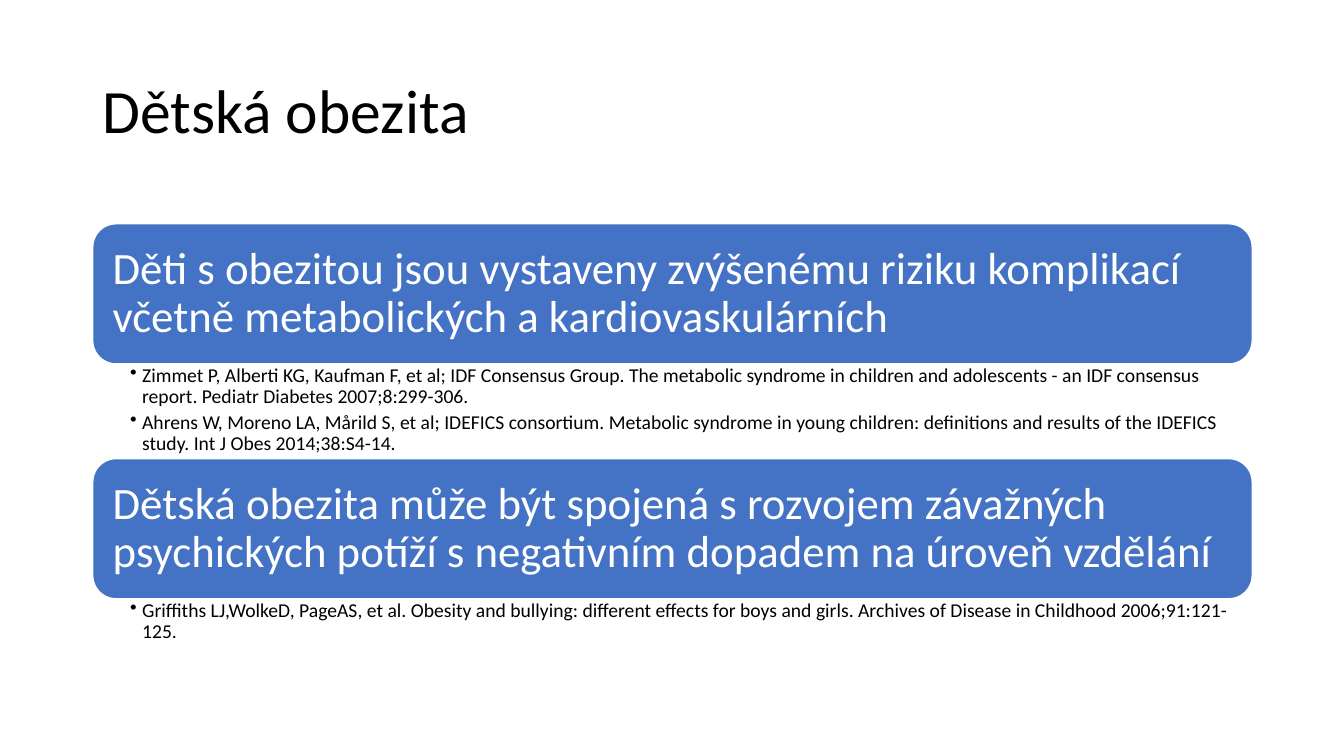
import pptx
import pptx.util
import pptx.dml.color
import pptx.enum.shapes
import pptx.enum.text
from lxml import etree
from pptx.util import Inches, Pt

TITLE = "Dětská obezita"
GROUPS = [
    ("Děti s obezitou jsou vystaveny zvýšenému riziku komplikací včetně "
     "metabolických a kardiovaskulárních",
     ["Zimmet P, Alberti KG, Kaufman F, et al; IDF Consensus Group. The metabolic "
      "syndrome in children and adolescents - an IDF consensus report. "
      "Pediatr Diabetes 2007;8:299-306.",
      "Ahrens W, Moreno LA, Mårild S, et al; IDEFICS consortium. Metabolic syndrome "
      "in young children: definitions and results of the IDEFICS study. "
      "Int J Obes 2014;38:S4-14."]),
    ("Dětská obezita může být spojená s rozvojem závažných psychických potíží "
     "s negativním dopadem na úroveň vzdělání",
     ["Griffiths LJ,WolkeD, PageAS, et al. Obesity and bullying: different effects "
      "for boys and girls. Archives of Disease in Childhood 2006;91:121-125."]),
]

BLACK = pptx.dml.color.RGBColor(0x00, 0x00, 0x00)
WHITE = pptx.dml.color.RGBColor(0xFF, 0xFF, 0xFF)
BLUE = pptx.dml.color.RGBColor(0x44, 0x72, 0xC4)
FONT = "Calibri"
LEFT, WIDTH = 0.92, 11.5
TOP, BAR = 2.22, 1.39
REFS = {1: 0.58, 2: 0.94}  # height of a list by its number of entries


def set_frame(shape, pads, middle=True):
    frame = shape.text_frame
    frame.word_wrap = True
    frame.auto_size = pptx.enum.text.MSO_AUTO_SIZE.NONE
    anchor = pptx.enum.text.MSO_ANCHOR
    frame.vertical_anchor = anchor.MIDDLE if middle else anchor.TOP
    (frame.margin_left, frame.margin_top,
     frame.margin_right, frame.margin_bottom) = map(Inches, pads)
    return frame


def write(para, text, size, color):
    para.alignment = pptx.enum.text.PP_ALIGN.LEFT
    para.line_spacing = 0.9
    run = para.add_run()
    run.text = text
    run.font.name, run.font.size = FONT, Pt(size)
    run.font.color.rgb = color


def add_bullet(para):
    props = para._p.get_or_add_pPr()
    props.set("marL", str(Inches(0.12)))
    props.set("indent", str(Inches(-0.12)))
    mark = etree.SubElement(props, pptx.oxml.ns.qn("a:buChar"))
    mark.set("char", "•")


def add_bar(slide, top, text):
    bar = slide.shapes.add_shape(
        pptx.enum.shapes.MSO_SHAPE.ROUNDED_RECTANGLE,
        Inches(LEFT), Inches(top), Inches(WIDTH), Inches(BAR))
    bar.shadow.inherit = False
    bar.fill.solid()
    bar.fill.fore_color.rgb = BLUE
    bar.line.color.rgb = WHITE
    bar.line.width = Pt(1)
    frame = set_frame(bar, (0.13,) * 4)
    write(frame.paragraphs[0], text, 32, WHITE)


def add_refs(slide, top, refs):
    box = slide.shapes.add_textbox(
        Inches(LEFT), Inches(top), Inches(WIDTH), Inches(REFS[len(refs)]))
    frame = set_frame(box, (0.37, 0.02, 0.11, 0.02), middle=False)
    for i, ref in enumerate(refs):
        para = frame.add_paragraph() if i else frame.paragraphs[0]
        add_bullet(para)
        para.space_after = Pt(2.8)
        write(para, ref, 14, BLACK)


def main():
    deck = pptx.Presentation()
    deck.slide_width, deck.slide_height = Inches(13.33), Inches(7.5)
    slide = deck.slides.add_slide(deck.slide_layouts[6])

    title = slide.shapes.add_textbox(
        Inches(LEFT), Inches(0.4), Inches(WIDTH), Inches(1.45))
    frame = set_frame(title, (0.1, 0.05, 0.1, 0.05))
    write(frame.paragraphs[0], TITLE, 44, BLACK)

    top = TOP
    for text, refs in GROUPS:
        add_bar(slide, top, text)
        add_refs(slide, top + BAR, refs)
        top += BAR + REFS[len(refs)]

    deck.save("out.pptx")


if __name__ == "__main__":
    main()
